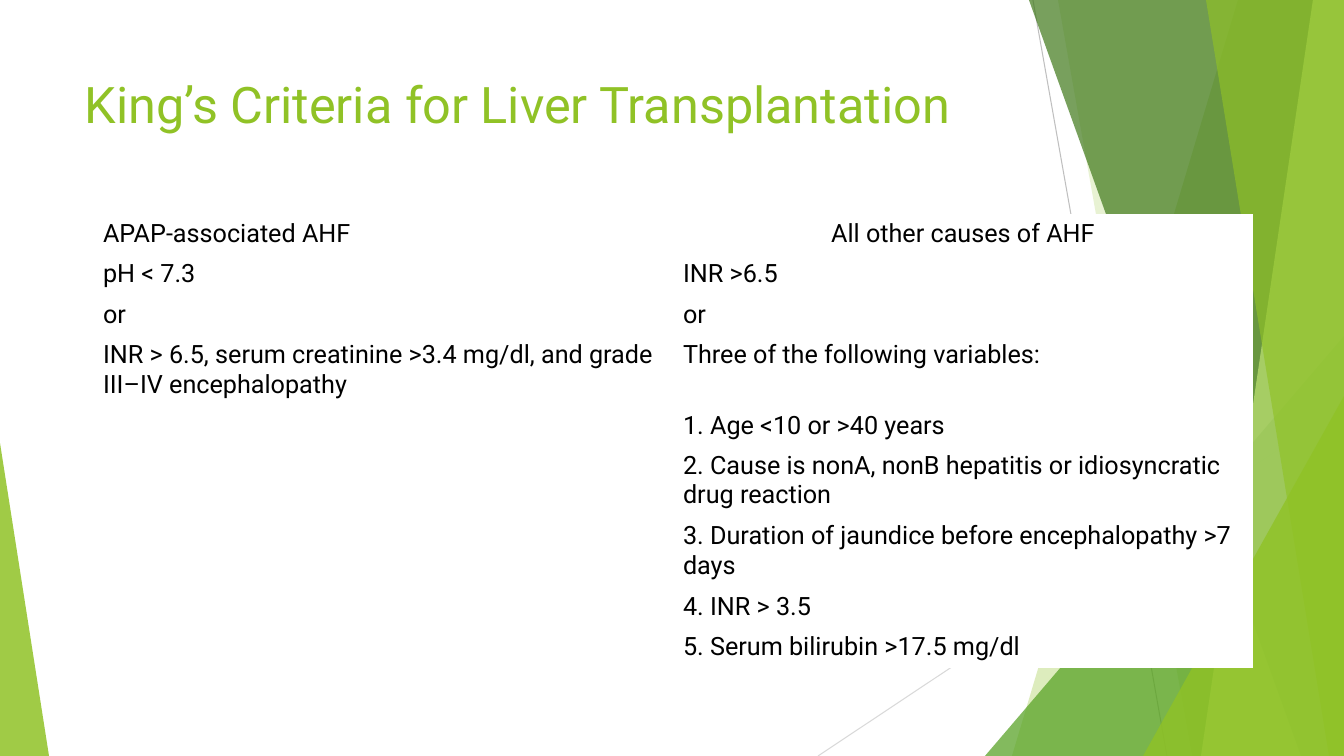
from pptx import Presentation
from pptx.dml.color import RGBColor
from pptx.enum.shapes import MSO_CONNECTOR as Connector, MSO_SHAPE as Preset
from pptx.enum.text import MSO_ANCHOR as Anchor, PP_ALIGN as Align
from pptx.oxml.ns import qn
from pptx.util import Pt
from lxml.etree import SubElement

PX = 914400 / 100.8  # EMU per px
WIDTH, HEIGHT = 1344, 756
THEME = {
    "font": "Roboto", "title_size": 36, "body_size": 18,
    "green": "90C226", "mid_green": "54A021", "dark_green": "3F7819",
    "light_green": "C0E474", "line": "BFBFBF", "pale_line": "D9D9D9",
    "text": "000000", "white": "FFFFFF",
}


def paint(shape, color, opacity):
    """Fill a decorative shape with a see-through theme colour."""
    shape.shadow.inherit = False
    shape.line.fill.background()
    shape.fill.solid()
    shape.fill.fore_color.rgb = RGBColor.from_string(THEME[color])
    solid = shape._element.spPr.find(qn("a:solidFill"))
    SubElement(solid[0], qn("a:alpha"), val=str(opacity * 1000))


def write(paragraph, text, size, color):
    run = paragraph.add_run()
    run.text = text
    run.font.name = THEME["font"]
    run.font.size = Pt(THEME[size])
    run.font.color.rgb = RGBColor.from_string(THEME[color])


presentation = Presentation()
presentation.slide_width = round(WIDTH * PX)
presentation.slide_height = round(HEIGHT * PX)
slide = presentation.slides.add_slide(presentation.slide_layouts[6])
shapes = slide.shapes

# Thin background lines
for x1, y1, x2, y2, color in [
    (1033, 0, 1167, HEIGHT, "line"),
    (WIDTH, 406, 818, HEIGHT, "pale_line"),
]:
    line = shapes.add_connector(
        Connector.STRAIGHT, *(round(n * PX) for n in (x1, y1, x2, y2)))
    line.line.color.rgb = RGBColor.from_string(THEME[color])
    line.line.width = Pt(0.75)
    SubElement(line._element.spPr, qn("a:effectLst"))

# Green facets, back to front: bands run from a top x to a bottom x and
# fill to the right edge; triangles have a box and an apex position
facets = [
    ("band", (1238, 1012), "green", 30),
    ("band", (1058, 1192), "green", 20),
    ("triangle", (985, 336, 359, 420, 1), "mid_green", 72),
    ("band", (1029, 1301), "dark_green", 70),
    ("band", (1313, 1201), "light_green", 70),
    ("band", (1206, 1329), "green", 65),
    ("triangle", (1143, 396, 201, 360, 1), "green", 80),
    ("triangle", (0, 443, 49, 313, 0), "green", 85),
]
for kind, geometry, color, opacity in facets:
    if kind == "band":
        top_x, bottom_x = geometry
        outline = shapes.build_freeform(top_x, 0, scale=PX)
        outline.add_line_segments(
            [(WIDTH, 0), (WIDTH, HEIGHT), (bottom_x, HEIGHT)], close=True)
        facet = outline.convert_to_shape()
    else:
        *box, apex = geometry
        facet = shapes.add_shape(
            Preset.ISOSCELES_TRIANGLE, *(round(n * PX) for n in box))
        facet.adjustments[0] = apex
    paint(facet, color, opacity)

# Title
title = shapes.add_textbox(*(round(n * PX) for n in (75, 68, 948, 145)))
title.text_frame.word_wrap = True
title.text_frame.vertical_anchor = Anchor.TOP
write(title.text_frame.paragraphs[0],
      "King’s Criteria for Liver Transplantation", "title_size", "green")

# Criteria table
criteria = [
    ("APAP-associated AHF", "All other causes of AHF"),
    ("pH < 7.3", "INR >6.5"),
    ("or", "or"),
    ("INR > 6.5, serum creatinine >3.4 mg/dl, and grade III–IV encephalopathy",
     "Three of the following variables:"),
    ("", "1. Age <10 or >40 years"),
    ("", "2. Cause is nonA, nonB hepatitis or idiosyncratic drug reaction"),
    ("", "3. Duration of jaundice before encephalopathy >7 days"),
    ("", "4. INR > 3.5"),
    ("", "5. Serum bilirubin >17.5 mg/dl"),
]
ONE_LINE, TWO_LINES = 39, 69
TWO_LINE_ROWS = {3, 5, 6}
heights = [TWO_LINES if row in TWO_LINE_ROWS else ONE_LINE
           for row in range(len(criteria))]
frame = shapes.add_table(len(criteria), 2, *(
    round(n * PX) for n in (93, 214, 1160, sum(heights))))
table = frame.table
table.first_row = table.horz_banding = False
# Plain style: no borders, no bands
table._tbl.tblPr.find(qn("a:tableStyleId")).text = (
    "{2D5ABB26-0587-4C30-8999-92F81FD0307C}")
for row, texts in enumerate(criteria):
    table.rows[row].height = round(heights[row] * PX)
    for column, text in enumerate(texts):
        cell = table.cell(row, column)
        cell.fill.solid()
        cell.fill.fore_color.rgb = RGBColor.from_string(THEME["white"])
        if text:
            write(cell.text_frame.paragraphs[0], text, "body_size", "text")
table.cell(0, 1).text_frame.paragraphs[0].alignment = Align.CENTER

presentation.save("out.pptx")
